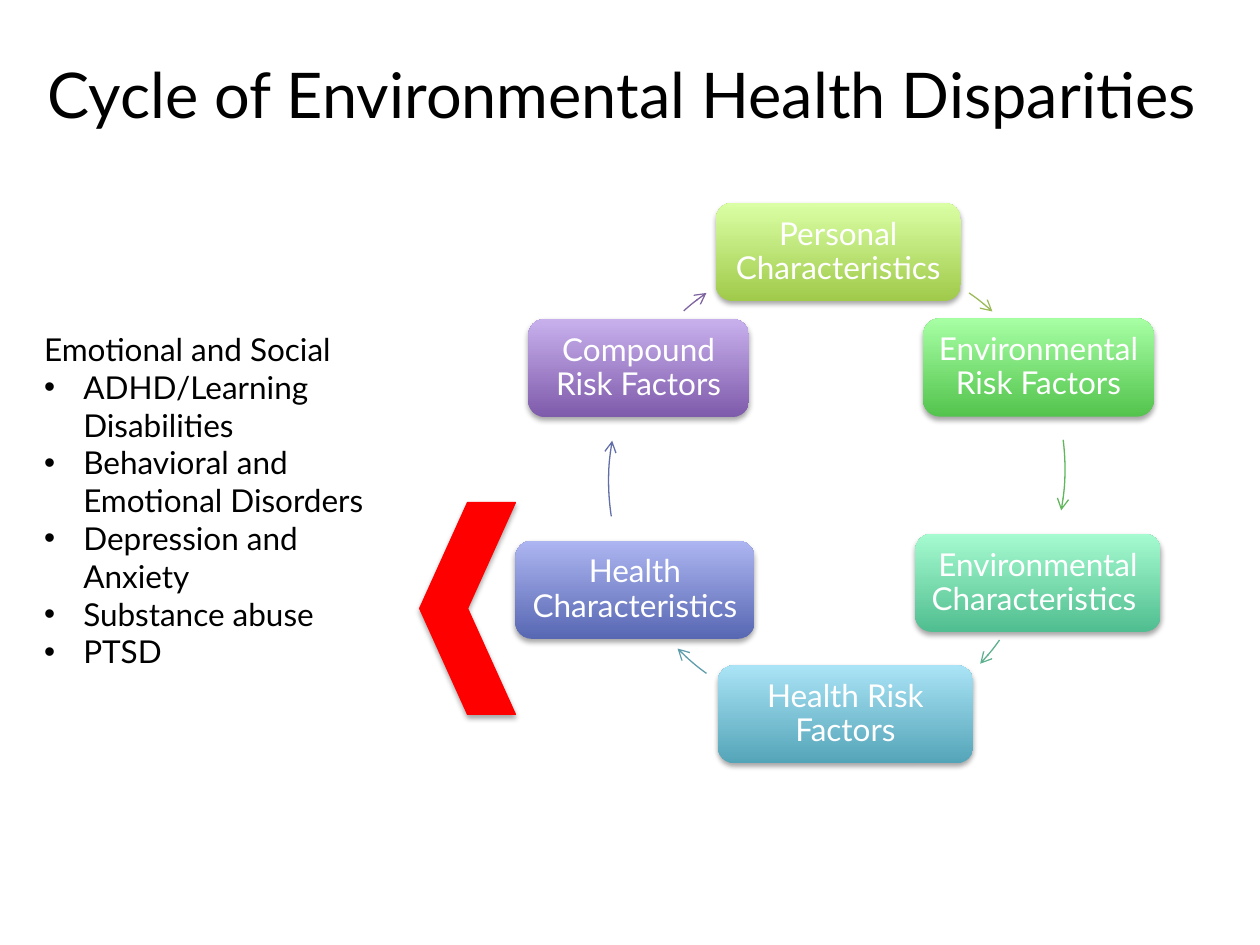
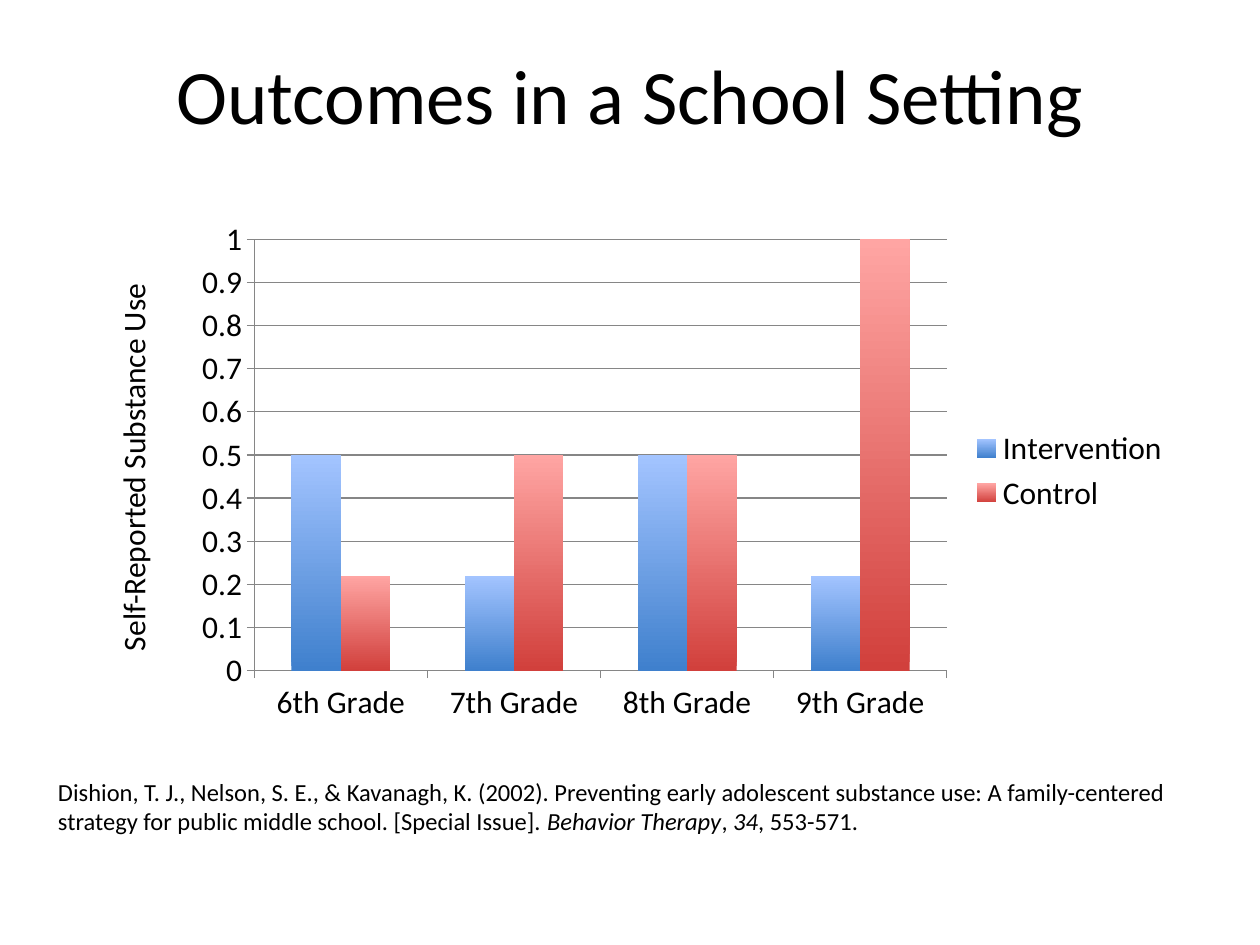
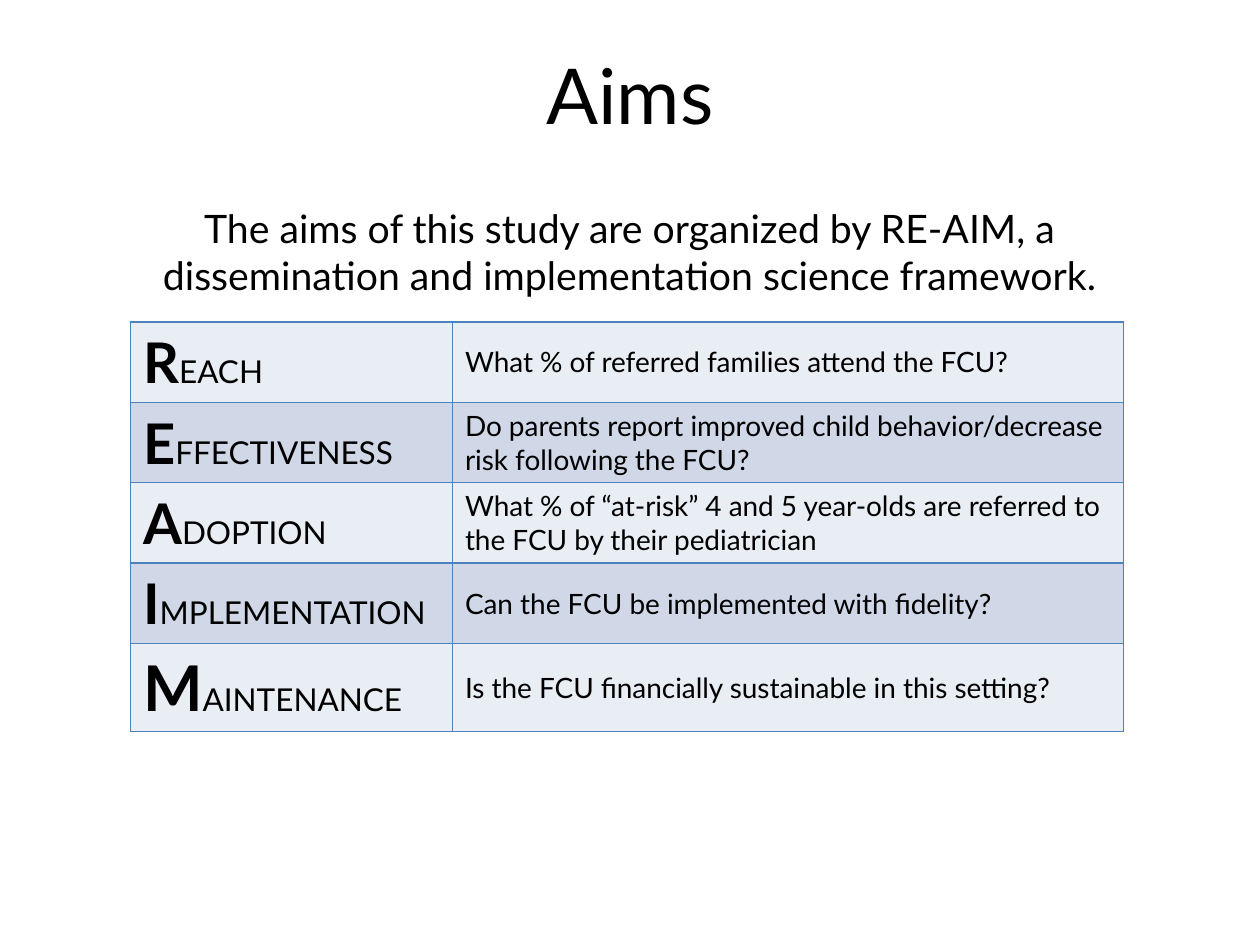
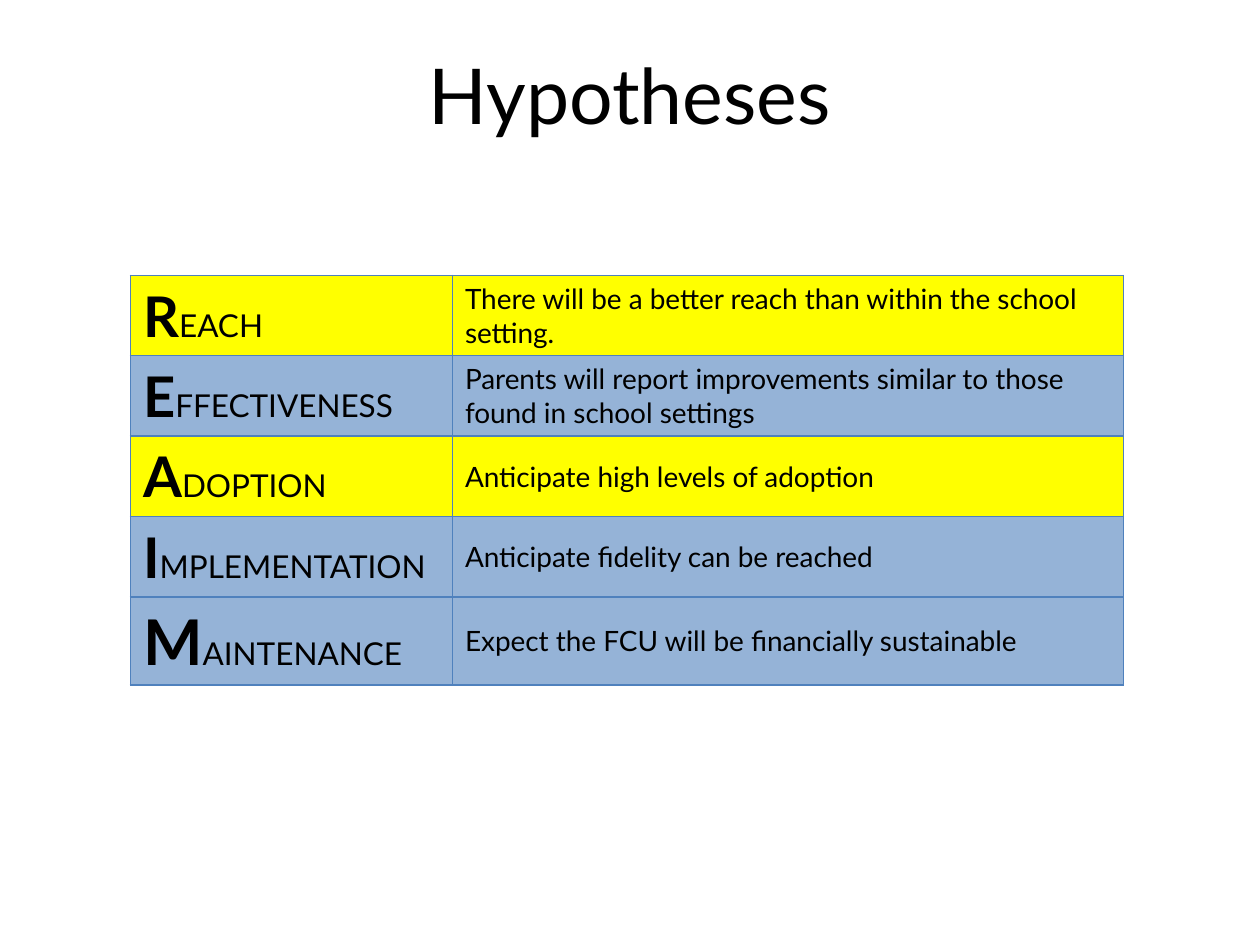
from lxml import etree
from pptx import Presentation
from pptx.chart.data import CategoryChartData
from pptx.dml.color import RGBColor
from pptx.enum.chart import XL_CHART_TYPE, XL_LEGEND_POSITION, XL_TICK_MARK
from pptx.enum.shapes import MSO_SHAPE
from pptx.enum.text import MSO_ANCHOR, MSO_AUTO_SIZE, PP_ALIGN
from pptx.oxml.ns import qn
from pptx.util import Cm, Pt

ROUND, CHEVRON, ARC = MSO_SHAPE.ROUNDED_RECTANGLE, MSO_SHAPE.CHEVRON, MSO_SHAPE.ARC
CENTER, LEFT = PP_ALIGN.CENTER, PP_ALIGN.LEFT
MIDDLE, NO_FIT = MSO_ANCHOR.MIDDLE, MSO_AUTO_SIZE.NONE
COLUMNS, RIGHT = XL_CHART_TYPE.COLUMN_CLUSTERED, XL_LEGEND_POSITION.RIGHT
OUTSIDE = XL_TICK_MARK.OUTSIDE


class Theme:
    main, plain = "Lato", "Calibri"
    black, white = RGBColor(0, 0, 0), RGBColor(255, 255, 255)
    red, yellow = RGBColor(255, 0, 0), RGBColor(255, 255, 0)
    pale, mist = RGBColor(0xE9, 0xED, 0xF4), RGBColor(0xD0, 0xD8, 0xE8)
    blue, grey = RGBColor(0x95, 0xB3, 0xD7), RGBColor(0x86, 0x86, 0x86)
    border = "4F81BD"
    bars = [("3F80CD", "A3C4FF"), ("D1403C", "FFA5A3")]
    title, long, initial, last = Pt(44), Pt(36), Pt(32), Pt(36)
    intro, text, cell, cite = Pt(22.4), Pt(18), Pt(16), Pt(14)


def style(par, size, name=Theme.main, color=Theme.black, align=LEFT):
    par.alignment = align
    par.font.size, par.font.name = size, name
    par.font.color.rgb = color


def add_page(title, size=Theme.title, name=Theme.main, left=1.27):
    """Add a title-only slide whose title is centred between equal margins."""
    page = deck.slides.add_slide(deck.slide_layouts[5])
    head = page.shapes.title
    head.left, head.top = Cm(left), Cm(0.29)
    head.width, head.height = deck.slide_width - 2 * Cm(left), Cm(3.18)
    frame = head.text_frame
    frame.text = title
    frame.auto_size, frame.vertical_anchor = NO_FIT, MIDDLE
    style(frame.paragraphs[0], size, name, align=CENTER)
    return page


deck = Presentation()
deck.slide_width, deck.slide_height = Cm(25.4), Cm(19.05)

# Slide 1: cycle
page = add_page("Cycle of Environmental Health Disparities ", Theme.long, left=0.64)

# Text, left, top, width, bottom colour, top colour
steps = [
    ("Personal Characteristics", 14.43, 4.09, 4.94, "A0CA4A", "DAFFA5"),
    ("Environmental Risk Factors", 18.61, 6.42, 4.65, "53C44D", "A7FFA4"),
    ("Environmental Characteristics ", 18.45, 10.76, 4.95, "50BE90", "A6FBD0"),
    ("Health Risk Factors", 14.47, 13.41, 5.15, "54A4B8", "AAE3F6"),
    ("Health Characteristics", 10.39, 10.9, 4.82, "5767B2", "ADB6F1"),
    ("Compound Risk Factors", 10.65, 6.43, 4.45, "7F5BAB", "C8B0ED"),
]
raised = []
for text, left, top, width, low, high in steps:
    box = page.shapes.add_shape(ROUND, Cm(left), Cm(top), Cm(width), Cm(1.98))
    box.adjustments[0] = 0.17
    box.line.fill.background()
    box.fill.gradient()
    box.fill.gradient_angle = 90
    for stop, tone in zip(box.fill.gradient_stops, (low, high)):
        stop.color.rgb = RGBColor.from_string(tone)
    frame = box.text_frame
    frame.word_wrap, frame.vertical_anchor = True, MIDDLE
    frame.margin_left = frame.margin_right = Cm(0.17)
    frame.margin_top = frame.margin_bottom = Cm(0.17)
    frame.text = text
    par = frame.paragraphs[0]
    par.line_spacing = 0.9
    style(par, Theme.text, color=Theme.white, align=CENTER)
    raised.append(box)

# Colour, left and top of the circle, then start and end in degrees
arcs = [
    ("9BBB59", 12.24, 5.08, 304.7, 312.1),
    ("5FB65B", 12.17, 4.8, 352.8, 10.4),
    ("5DB18E", 11.71, 5.56, 35.4, 43),
    ("5F9DAC", 12.32, 5.16, 125.9, 135.4),
    ("626EA7", 12.27, 5.05, 171.2, 190.1),
    ("8064A2", 12.24, 5.08, 228.1, 235.3),
]
DEGREE = 0.6  # one degree in units of an arc adjustment
for tone, left, top, start, end in arcs:
    arc = page.shapes.add_shape(ARC, Cm(left), Cm(top), Cm(9.3), Cm(9.3))
    arc.adjustments[0], arc.adjustments[1] = start * DEGREE, end * DEGREE
    arc.shadow.inherit = False
    arc.fill.background()
    arc.line.color.rgb = RGBColor.from_string(tone)
    arc.line.width = Pt(0.75)
    etree.SubElement(arc.line._get_or_add_ln(), qn("a:tailEnd"), type="arrow")

mark = page.shapes.add_shape(CHEVRON, Cm(8.46), Cm(10.13), Cm(1.93), Cm(4.27))
mark.rotation = 180
mark.fill.solid()
mark.fill.fore_color.rgb = mark.line.color.rgb = Theme.red
mark.line.width = Pt(0.75)
raised.append(mark)

for shape in raised:
    shape.shadow.inherit = False
    effect = shape._element.spPr.find(qn("a:effectLst"))
    shade = etree.SubElement(effect, qn("a:outerShdw"), blurRad=str(Pt(3.1)),
                             dist=str(Pt(1.8)), dir="5400000", rotWithShape="0")
    ink = etree.SubElement(shade, qn("a:srgbClr"), val="000000")
    etree.SubElement(ink, qn("a:alpha"), val="35000")

signs = ["Emotional and Social", "ADHD/Learning Disabilities",
         "Behavioral and Emotional Disorders", "Depression and Anxiety",
         "Substance abuse", "PTSD"]
frame = page.shapes.add_textbox(Cm(0.64), Cm(6.53), Cm(7.47), Cm(7.19)).text_frame
frame.word_wrap = True
frame.text = "\n".join(signs)
for row, par in enumerate(frame.paragraphs):
    if row:
        props = par._p.get_or_add_pPr()
        props.set("marL", str(Cm(0.79)))
        props.set("indent", str(-Cm(0.79)))
        etree.SubElement(props, qn("a:buFont"), typeface="Arial")
        etree.SubElement(props, qn("a:buChar"), char="•")
    style(par, Theme.text)

# Slide 2: chart
page = add_page("Outcomes in a School Setting", name=Theme.plain)
data = CategoryChartData()
data.categories = ["6th Grade", "7th Grade", "8th Grade", "9th Grade"]
data.add_series("Intervention", (0.5, 0.22, 0.5, 0.22))
data.add_series("Control", (0.22, 0.5, 0.5, 1))
chart = page.shapes.add_chart(
    COLUMNS, Cm(3.67), Cm(4.23), Cm(20.17), Cm(10.52), data).chart
chart.has_title = False
chart.font.size, chart.font.name = Theme.text, Theme.plain
chart.font.color.rgb = Theme.black
chart.has_legend = True
chart.legend.position, chart.legend.include_in_layout = RIGHT, False
scale = chart.value_axis
scale.minimum_scale, scale.maximum_scale, scale.major_unit = 0, 1, 0.1
scale.has_major_gridlines = True
scale.major_gridlines.format.line.color.rgb = Theme.grey
for axis in (chart.category_axis, scale):
    axis.major_tick_mark = OUTSIDE
    axis.format.line.color.rgb = Theme.grey
plot = chart.plots[0]
plot.gap_width, plot.overlap, plot.vary_by_categories = 150, 0, False
for series, tones in zip(plot.series, Theme.bars):
    fill = series.format.fill
    fill.gradient()
    fill.gradient_angle = 90
    for stop, tone in zip(fill.gradient_stops, tones):
        stop.color.rgb = RGBColor.from_string(tone)

frame = page.shapes.add_textbox(Cm(0.92), Cm(15.53), Cm(23.57), Cm(1.45)).text_frame
frame.word_wrap = True
par = frame.paragraphs[0]
style(par, Theme.cite, Theme.plain)
cite = [
    ("Dishion, T. J., Nelson, S. E., & Kavanagh, K. (2002). Preventing early "
     "adolescent substance use: A family-centered strategy for public middle "
     "school. [Special Issue]. ", False),
    ("Behavior Therapy", True), (", ", False), ("34", True), (", 553-571.", False),
]
for text, slant in cite:
    run = par.add_run()
    run.text, run.font.italic = text, slant

label = page.shapes.add_textbox(Cm(-2.72), Cm(8.84), Cm(10.8), Cm(1.02))
label.rotation = 270
label.text_frame.word_wrap = True
label.text_frame.text = "Self-Reported Substance Use "
style(label.text_frame.paragraphs[0], Theme.text, Theme.plain, align=CENTER)

# Slides 3 and 4: one table each
words = ["REACH", "EFFECTIVENESS", "ADOPTION", "IMPLEMENTATION", "MAINTENANCE"]
aims = [
    "What % of referred families attend the FCU?",
    "Do parents report improved child behavior/decrease risk following the FCU?",
    "What % of “at-risk” 4 and 5 year-olds are referred to the FCU by their pediatrician",
    "Can the FCU be implemented with fidelity?",
    "Is the FCU financially sustainable in this setting?",
]
hopes = [
    "There will be a better reach than within the school setting.",
    "Parents will report improvements similar to those found in school settings",
    "Anticipate high levels of adoption",
    "Anticipate fidelity can be reached",
    "Expect the FCU will be financially sustainable",
]
pale, mist, gold, blue = Theme.pale, Theme.mist, Theme.yellow, Theme.blue
tables = [
    ("Aims", 6.49, aims, [pale, mist, pale, mist, pale],
     "The aims of this study are organized by RE-AIM, a dissemination and "
     "implementation science framework."),
    ("Hypotheses", 5.55, hopes, [gold, blue, gold, blue, blue], None),
]
for title, top, notes, fills, intro in tables:
    page = add_page(title)
    if intro:
        frame = page.shapes.add_textbox(
            Cm(2.14), Cm(3.99), Cm(21.13), Cm(2.39)).text_frame
        frame.word_wrap = True
        frame.text = intro
        style(frame.paragraphs[0], Theme.intro, align=CENTER)

    grid = page.shapes.add_table(
        len(words), 2, Cm(2.63), Cm(top), Cm(20.02), Cm(8.25)).table
    grid.first_row = grid.horz_banding = False
    grid.columns[0].width, grid.columns[1].width = Cm(6.49), Cm(13.53)
    for row, (word, note, tone) in enumerate(zip(words, notes, fills)):
        final = row == len(words) - 1
        grid.rows[row].height = Cm(1.77 if final else 1.62)
        name, fact = grid.cell(row, 0), grid.cell(row, 1)
        par = name.text_frame.paragraphs[0]
        style(par, Theme.text)
        first, rest = par.add_run(), par.add_run()
        first.text, rest.text = word[0], word[1:]
        first.font.bold = True
        first.font.size = Theme.last if final else Theme.initial
        fact.text = note
        style(fact.text_frame.paragraphs[0], Theme.cell)
        for cell in (name, fact):
            cell.vertical_anchor = MIDDLE
            props = cell._tc.get_or_add_tcPr()
            for side in ("a:lnL", "a:lnR", "a:lnT", "a:lnB"):
                edge = etree.SubElement(props, qn(side), w=str(Pt(1)))
                ink = etree.SubElement(edge, qn("a:solidFill"))
                etree.SubElement(ink, qn("a:srgbClr"), val=Theme.border)
            cell.fill.solid()
            cell.fill.fore_color.rgb = tone

deck.save("out.pptx")
